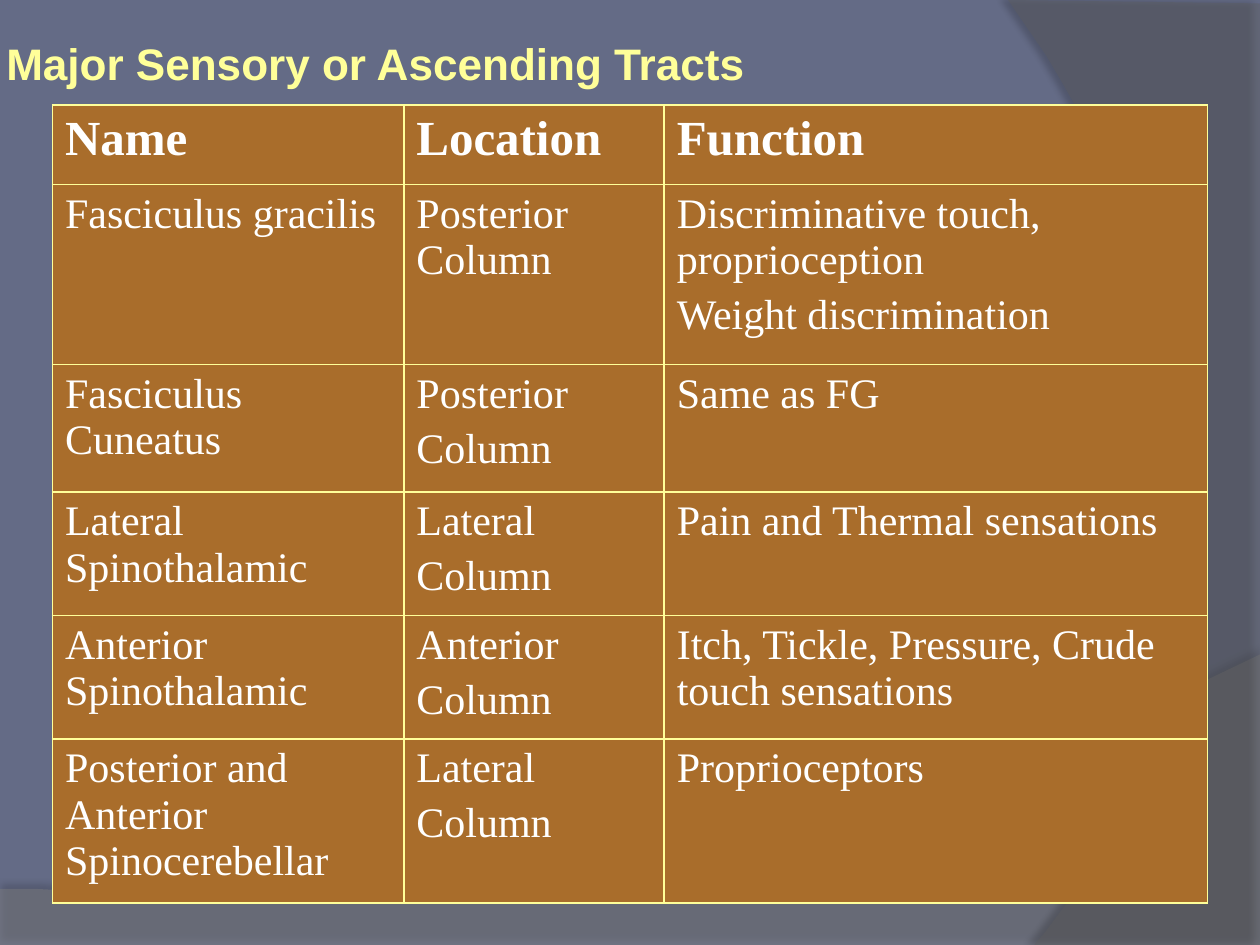
from lxml import etree
from pptx import Presentation
from pptx.dml.color import RGBColor
from pptx.enum.text import MSO_ANCHOR
from pptx.oxml import parse_xml
from pptx.oxml.ns import nsdecls, qn
from pptx.util import Pt

COLORS = {
    "background": "646B86",
    "wave": "7F7F7F",
    "side": "5E5E5E",
    "shadow": "000000",
    "accent": "FFFF99",
    "cell": "A96D2B",
    "text": "FFFFFF",
}
CURVE_STEPS = 40


def rgb(name):
    return RGBColor.from_string(COLORS[name])


def add_backdrop(slide, corners, curve, color, opacity, shadow_opacity, distance, angle):
    """Draw a translucent outline of straight corners closed by a cubic Bezier curve."""
    points = list(corners)
    for step in range(CURVE_STEPS + 1):
        t = step / CURVE_STEPS
        weights = ((1 - t) ** 3, 3 * t * (1 - t) ** 2, 3 * t ** 2 * (1 - t), t ** 3)
        points.append(tuple(sum(w * p[axis] for w, p in zip(weights, curve)) for axis in (0, 1)))
    builder = slide.shapes.build_freeform(*points[0], scale=Pt(1))
    builder.add_line_segments(points[1:], close=True)
    shape = builder.convert_to_shape()
    shape.fill.solid()
    shape.fill.fore_color.rgb = rgb(color)
    shape.line.fill.background()
    fill_color = shape._element.spPr.find(qn("a:solidFill"))[0]
    etree.SubElement(fill_color, qn("a:alpha")).set("val", str(opacity * 1000))
    shape._element.spPr.append(parse_xml(
        f'<a:effectLst {nsdecls("a")}><a:outerShdw blurRad="{Pt(4)}" dist="{Pt(distance)}" '
        f'dir="{angle * 60000}" algn="ctr" rotWithShape="0"><a:srgbClr val="{COLORS["shadow"]}">'
        f'<a:alpha val="{shadow_opacity * 1000}"/></a:srgbClr></a:outerShdw></a:effectLst>'))


presentation = Presentation()
presentation.slide_width, presentation.slide_height = Pt(720), Pt(540)
slide = presentation.slides.add_slide(presentation.slide_layouts[6])
slide.background.fill.solid()
slide.background.fill.fore_color.rgb = rgb("background")

# Backdrop: a wave along the bottom and a curved band on the right
add_backdrop(slide, [(0, 540.5), (720, 540.5)],
             [(720, 374.4), (402.5, 524.9), (281.5, 517.7), (0, 507.6)],
             "wave", 45, 35, 3.5, 270)
add_backdrop(slide, [(720, 1.5), (720, 540)],
             [(591, 540), (673.2, 445.7), (733, 216), (576, 0)],
             "side", 40, 45, 4, 180)

# Title
title = slide.shapes.add_textbox(Pt(0), Pt(18), Pt(720), Pt(36))
frame = title.text_frame
frame.word_wrap = True
frame.vertical_anchor = MSO_ANCHOR.MIDDLE
frame.margin_left = frame.margin_right = frame.margin_top = frame.margin_bottom = Pt(3.6)
paragraph = frame.paragraphs[0]
paragraph.text = "Major Sensory or Ascending Tracts"
paragraph.font.name = "Arial"
paragraph.font.size = Pt(25.2)
paragraph.font.bold = True
paragraph.font.color.rgb = rgb("accent")

# Table of tracts; a line break inside a cell starts a new paragraph
TRACTS = [
    ("Name", "Location", "Function"),
    ("Fasciculus gracilis", "Posterior Column",
     "Discriminative touch, proprioception\nWeight discrimination"),
    ("Fasciculus Cuneatus", "Posterior\nColumn", "Same as FG"),
    ("Lateral Spinothalamic", "Lateral\nColumn", "Pain and Thermal sensations"),
    ("Anterior Spinothalamic", "Anterior\nColumn",
     "Itch, Tickle, Pressure, Crude touch sensations"),
    ("Posterior and Anterior Spinocerebellar", "Lateral\nColumn", "Proprioceptors"),
]
COLUMN_WIDTHS = [200.8, 148.8, 310.4]
ROW_HEIGHTS = [45.4, 103, 72.8, 70.6, 70.6, 86.8]

table = slide.shapes.add_table(len(ROW_HEIGHTS), len(COLUMN_WIDTHS), Pt(30), Pt(60),
                               Pt(sum(COLUMN_WIDTHS)), Pt(sum(ROW_HEIGHTS))).table
for column, width in zip(table.columns, COLUMN_WIDTHS):
    column.width = Pt(width)
for row, height in zip(table.rows, ROW_HEIGHTS):
    row.height = Pt(height)

for row_index, texts in enumerate(TRACTS):
    is_header = row_index == 0
    for column_index, text in enumerate(texts):
        cell = table.cell(row_index, column_index)
        cell.text = text
        for index, paragraph in enumerate(cell.text_frame.paragraphs):
            if index:
                paragraph.space_before = Pt(4.8)
            paragraph.font.name = "Times New Roman"
            paragraph.font.size = Pt(28 if is_header else 24)
            paragraph.font.bold = is_header
            paragraph.font.color.rgb = rgb("text")
        properties = cell._tc.get_or_add_tcPr()
        for side in ("lnL", "lnR", "lnT", "lnB"):
            properties.append(parse_xml(
                f'<a:{side} {nsdecls("a")} w="{Pt(1)}"><a:solidFill>'
                f'<a:srgbClr val="{COLORS["accent"]}"/></a:solidFill></a:{side}>'))
        cell.fill.solid()
        cell.fill.fore_color.rgb = rgb("cell")

presentation.save("out.pptx")
